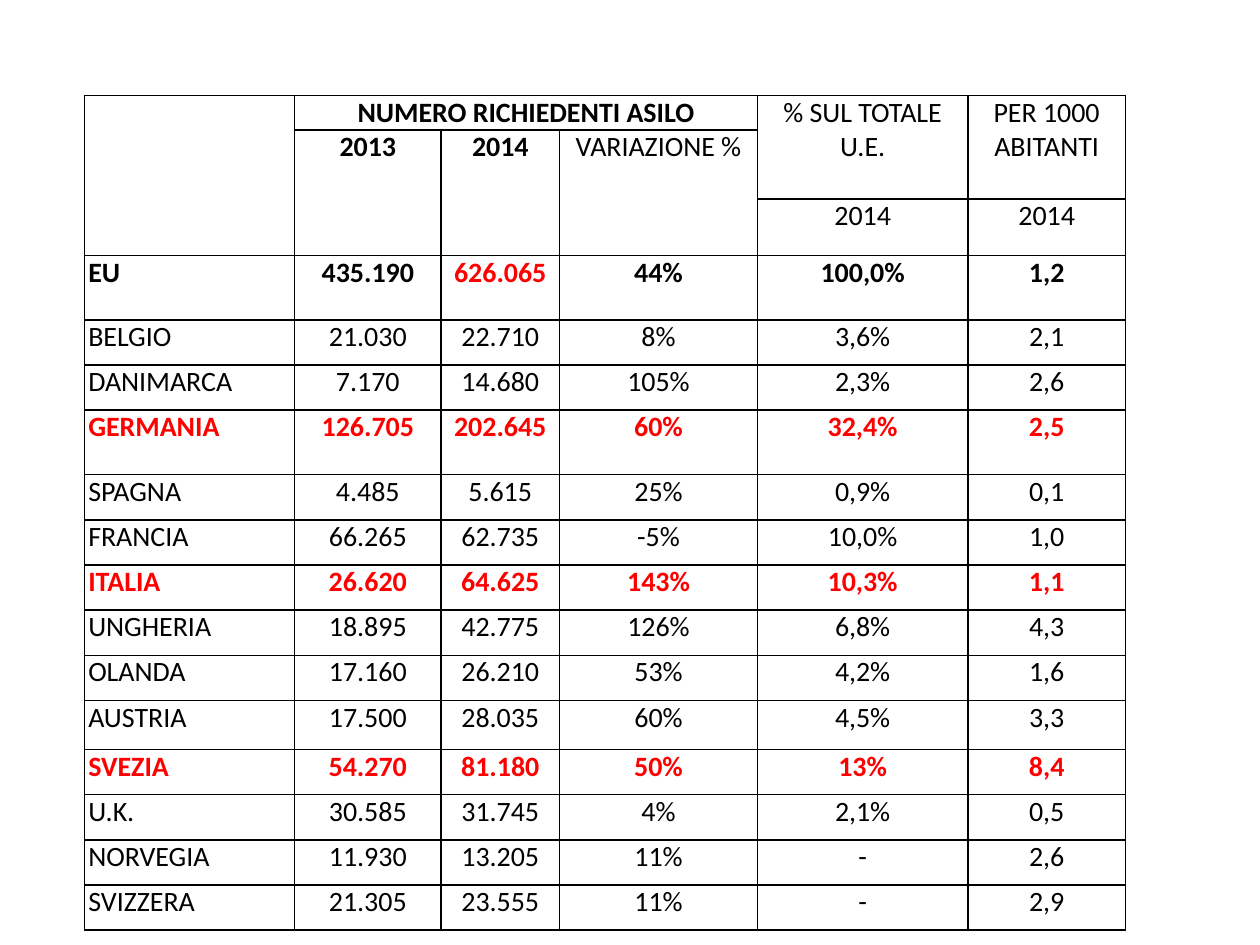
from lxml.etree import SubElement
from pptx import Presentation
from pptx.dml.color import RGBColor
from pptx.enum.text import PP_ALIGN as Align
from pptx.oxml.ns import qn
from pptx.util import Cm, Pt

BLACK = RGBColor(0x00, 0x00, 0x00)
RED = RGBColor(0xFF, 0x00, 0x00)

COLUMN_WIDTHS = [4.24, 2.95, 2.39, 3.99, 4.24, 3.18]
HEADER_HEIGHTS = [0.67, 1.39, 1.14]
ROW_HEIGHT = 0.91
SPECIAL_HEIGHTS = {"EU": 1.3, "GERMANIA": 1.3, "AUSTRIA": 0.99}

# row, column, text, bold, last row, last column
HEADERS = [
    (0, 0, "", False, 2, 0),
    (0, 1, "NUMERO RICHIEDENTI ASILO", True, 0, 3),
    (0, 4, "% SUL TOTALE U.E.", False, 1, 4),
    (0, 5, "PER 1000 ABITANTI", False, 1, 5),
    (1, 1, "2013", True, 2, 1),
    (1, 2, "2014", True, 2, 2),
    (1, 3, "VARIAZIONE %", False, 2, 3),
    (2, 4, "2014", False, 2, 4),
    (2, 5, "2014", False, 2, 5),
]
COUNTRIES = [
    ("EU", "435.190", "626.065", "44%", "100,0%", "1,2"),
    ("BELGIO", "21.030", "22.710", "8%", "3,6%", "2,1"),
    ("DANIMARCA", "7.170", "14.680", "105%", "2,3%", "2,6"),
    ("GERMANIA", "126.705", "202.645", "60%", "32,4%", "2,5"),
    ("SPAGNA", "4.485", "5.615", "25%", "0,9%", "0,1"),
    ("FRANCIA", "66.265", "62.735", "-5%", "10,0%", "1,0"),
    ("ITALIA", "26.620", "64.625", "143%", "10,3%", "1,1"),
    ("UNGHERIA", "18.895", "42.775", "126%", "6,8%", "4,3"),
    ("OLANDA", "17.160", "26.210", "53%", "4,2%", "1,6"),
    ("AUSTRIA", "17.500", "28.035", "60%", "4,5%", "3,3"),
    ("SVEZIA", "54.270", "81.180", "50%", "13%", "8,4"),
    ("U.K.", "30.585", "31.745", "4%", "2,1%", "0,5"),
    ("NORVEGIA", "11.930", "13.205", "11%", "-", "2,6"),
    ("SVIZZERA", "21.305", "23.555", "11%", "-", "2,9"),
]
HIGHLIGHTED = {"GERMANIA", "ITALIA", "SVEZIA"}
HIGHLIGHTED_VALUE = "626.065"


class SlideBuilder:
    font_name = "Calibri"
    font_size = Pt(16)
    side_margin = Cm(0.08)
    border_width = Pt(1)

    def __init__(self, slide):
        self.slide = slide

    def add_table(self, left, top, widths, heights):
        table = self.slide.shapes.add_table(
            len(heights), len(widths), Cm(left), Cm(top),
            Cm(sum(widths)), Cm(sum(heights))).table
        table.first_row = table.horz_banding = False
        for column, width in zip(table.columns, widths):
            column.width = Cm(width)
        for row, height in zip(table.rows, heights):
            row.height = Cm(height)
        for cell in table.iter_cells():
            self.format_cell(cell)
        return table

    def format_cell(self, cell):
        cell.margin_left = cell.margin_right = self.side_margin
        cell.margin_top = cell.margin_bottom = 0
        properties = cell._tc.get_or_add_tcPr()
        for side in ("lnL", "lnR", "lnT", "lnB"):
            line = SubElement(properties, qn(f"a:{side}"), w=str(self.border_width))
            fill = SubElement(line, qn("a:solidFill"))
            SubElement(fill, qn("a:srgbClr"), val=str(BLACK))
        cell.fill.background()

    def write_cell(self, cell, text, bold=False, color=BLACK, align=Align.CENTER):
        cell.text = text
        paragraph = cell.text_frame.paragraphs[0]
        paragraph.alignment = align
        font = paragraph.font
        font.name, font.size, font.bold = self.font_name, self.font_size, bold
        font.color.rgb = color


def main():
    presentation = Presentation()
    presentation.slide_width, presentation.slide_height = Cm(25.4), Cm(19.05)
    blank_layout = presentation.slide_layouts[6]
    builder = SlideBuilder(presentation.slides.add_slide(blank_layout))

    heights = HEADER_HEIGHTS + [
        SPECIAL_HEIGHTS.get(country[0], ROW_HEIGHT) for country in COUNTRIES]
    table = builder.add_table(1.7, 1.93, COLUMN_WIDTHS, heights)

    for row, column, text, bold, last_row, last_column in HEADERS:
        cell = table.cell(row, column)
        if (row, column) != (last_row, last_column):
            cell.merge(table.cell(last_row, last_column))
        builder.write_cell(cell, text, bold)

    for row, country in enumerate(COUNTRIES, len(HEADER_HEIGHTS)):
        highlighted = country[0] in HIGHLIGHTED
        for column, text in enumerate(country):
            builder.write_cell(
                table.cell(row, column), text,
                bold=highlighted or country[0] == "EU",
                color=RED if highlighted or text == HIGHLIGHTED_VALUE else BLACK,
                align=Align.CENTER if column else Align.LEFT)

    presentation.save("out.pptx")


if __name__ == "__main__":
    main()
